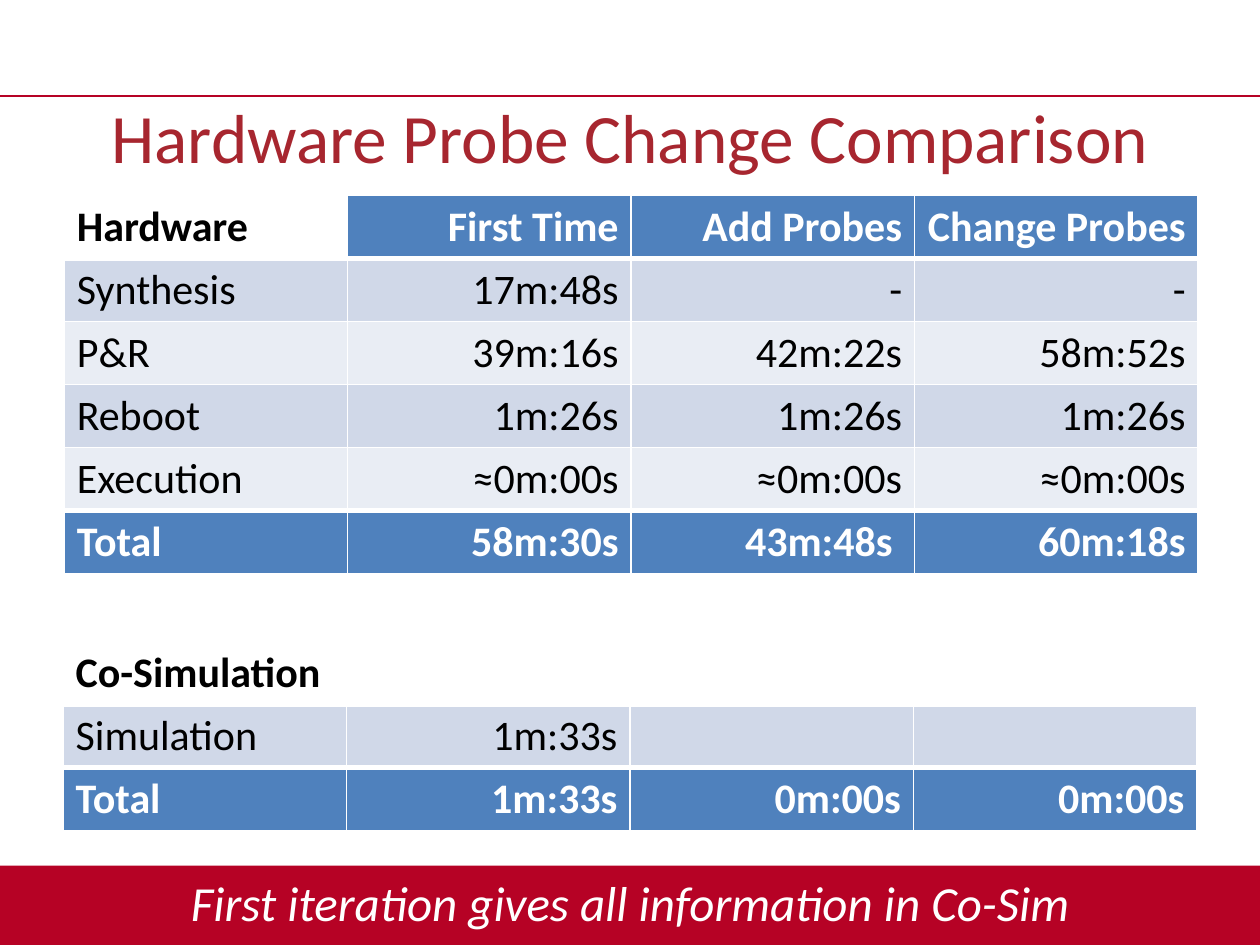
from dataclasses import dataclass

from lxml.etree import SubElement
from pptx import Presentation
from pptx.dml.color import RGBColor
from pptx.enum.shapes import MSO_CONNECTOR as Connector, MSO_SHAPE as Shape
from pptx.enum.text import MSO_ANCHOR as Anchor, MSO_AUTO_SIZE as AutoSize, PP_ALIGN as Align
from pptx.oxml import parse_xml
from pptx.oxml.ns import nsdecls, qn
from pptx.util import Inches, Pt


@dataclass(frozen=True)
class Theme:
    font: str = "Calibri"
    title_size: float = 39.6
    table_size: float = 24
    footer_size: float = 28
    title: str = "A7262F"
    accent: str = "B60225"
    header: str = "4F81BD"
    bands: tuple = ("D0D8E8", "E9EDF4")
    light: str = "FFFFFF"
    dark: str = "000000"
    thin: float = 1
    thick: float = 3


THEME = Theme()

HARDWARE_ROWS = [
    ["Hardware", "First Time", "Add Probes", "Change Probes"],
    ["Synthesis", "17m:48s", "-", "-"],
    ["P&R", "39m:16s", "42m:22s", "58m:52s"],
    ["Reboot", "1m:26s", "1m:26s", "1m:26s"],
    ["Execution", "≈0m:00s", "≈0m:00s", "≈0m:00s"],
    ["Total", "58m:30s", "43m:48s ", "60m:18s"],
]
SIMULATION_ROWS = [
    ["Co-Simulation", "", "", ""],
    ["Simulation", "1m:33s", "", ""],
    ["Total", "1m:33s", "0m:00s", "0m:00s"],
]


def write(frame, text, size, color, align, bold=False, italic=False):
    frame.text = text
    para = frame.paragraphs[0]
    para.alignment = align
    for font in [para.font] + [span.font for span in para.runs]:
        font.name = THEME.font
        font.size = Pt(size)
        font.bold = bold
        font.italic = italic
        font.color.rgb = RGBColor.from_string(color)


def add_title(page, text, left, top, width, height):
    box = page.shapes.title
    box.left, box.top, box.width, box.height = left, top, width, height
    frame = box.text_frame
    frame.auto_size = AutoSize.NONE
    frame.vertical_anchor = Anchor.MIDDLE
    write(frame, text, THEME.title_size, THEME.title, Align.CENTER)


def add_rule(page, left, top, width):
    rule = page.shapes.add_connector(Connector.STRAIGHT, left, top, left + width, top)
    rule.line.color.rgb = RGBColor.from_string(THEME.accent)
    rule.line.width = Pt(THEME.thin)
    SubElement(rule._element.spPr, qn("a:effectLst"))


def add_footer(page, text, left, top, width, height):
    band = page.shapes.add_shape(Shape.RECTANGLE, left, top, width, height)
    band.shadow.inherit = False
    band.fill.solid()
    band.fill.fore_color.rgb = RGBColor.from_string(THEME.accent)
    band.line.fill.background()

    box = page.shapes.add_textbox(left, top - Inches(0.03), width, height)
    frame = box.text_frame
    frame.word_wrap = True
    frame.vertical_anchor = Anchor.MIDDLE
    write(frame, text, THEME.footer_size, THEME.light, Align.CENTER, italic=True)


def set_borders(cell, top, bottom):
    """Give the cell white borders; they must come before its fill."""
    sides = {"L": THEME.thin, "R": THEME.thin, "T": top, "B": bottom}
    properties = cell._tc.get_or_add_tcPr()
    for index, (side, width) in enumerate(sides.items()):
        properties.insert(index, parse_xml(
            f'<a:ln{side} {nsdecls("a")} w="{Pt(width)}"><a:solidFill>'
            f'<a:srgbClr val="{THEME.light}"/></a:solidFill></a:ln{side}>'))


def add_timing_table(page, rows, header_fills, left, top, width, row_height):
    last = len(rows) - 1
    columns = len(rows[0])
    table = page.shapes.add_table(
        len(rows), columns, left, top, width, row_height * len(rows)).table
    table.last_row = True
    for column in table.columns:
        column.width = width // columns

    for r, texts in enumerate(rows):
        table.rows[r].height = row_height
        for c, text in enumerate(texts):
            if r == 0:
                fill = header_fills[c]
            elif r == last:
                fill = THEME.header
            else:
                fill = THEME.bands[(r - 1) % 2]
            cell = table.cell(r, c)
            cell.fill.solid()
            cell.fill.fore_color.rgb = RGBColor.from_string(fill)
            set_borders(cell,
                        top=THEME.thick if r in (1, last) else THEME.thin,
                        bottom=THEME.thick if r in (0, last - 1) else THEME.thin)
            write(cell.text_frame, text, THEME.table_size,
                  THEME.light if fill == THEME.header else THEME.dark,
                  Align.RIGHT if c else Align.LEFT, bold=r in (0, last))


def main():
    deck = Presentation()
    deck.slide_width, deck.slide_height = Inches(10), Inches(7.5)
    page = deck.slides.add_slide(deck.slide_layouts.get_by_name("Title Only"))
    width = deck.slide_width
    band_height = Inches(0.63)
    rule_top = Inches(0.76)
    table_width, row_height = Inches(9), Inches(0.5)

    add_footer(page, "First iteration gives all information in Co-Sim",
               0, deck.slide_height - band_height, width, band_height)
    add_rule(page, 0, rule_top, width)
    add_title(page, "Hardware Probe Change Comparison", 0, rule_top, width, band_height)
    add_timing_table(page, HARDWARE_ROWS, [THEME.light] + [THEME.header] * 3,
                     Inches(0.51), Inches(1.55), table_width, row_height)
    add_timing_table(page, SIMULATION_ROWS, [THEME.light] * 4,
                     Inches(0.5), Inches(5.09), table_width, row_height)
    deck.save("out.pptx")


if __name__ == "__main__":
    main()
